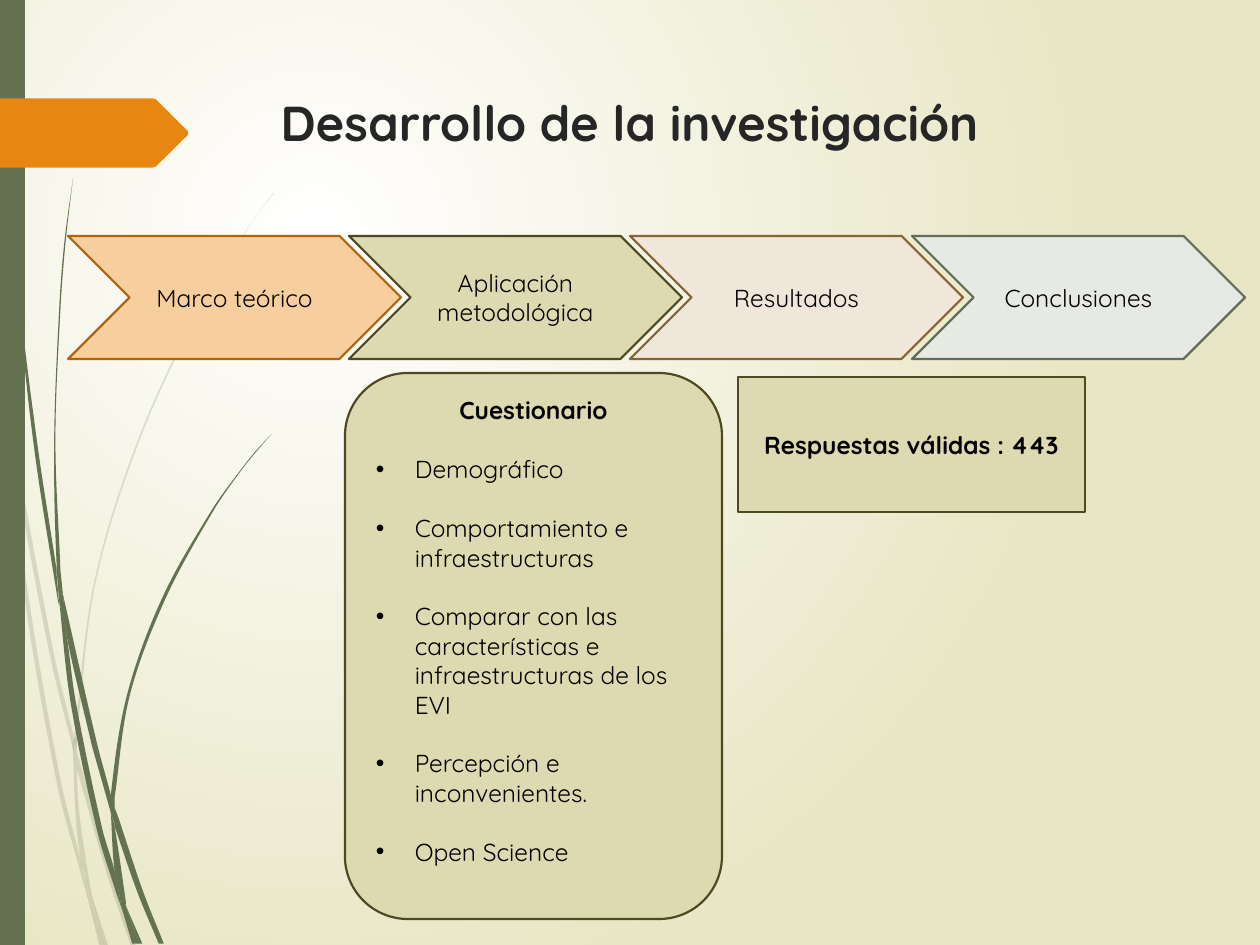
from math import hypot

from lxml.etree import SubElement
from pptx import Presentation
from pptx.dml.color import RGBColor
from pptx.enum.shapes import MSO_SHAPE
from pptx.enum.text import MSO_ANCHOR, PP_ALIGN
from pptx.oxml.ns import qn
from pptx.util import Pt

PX = 914400 / 126
FINE = 9144  # hundredths of an inch, for the thin outlines
WIDTH, HEIGHT = 1260, 945

GREEN, ORANGE, INK, BLACK = "647252", "E78712", "262626", "000000"
OLIVE, OLIVE_LINE = "DDD9B0", "4D4A22"
BACKGROUND = ["FFFFFF", "E8E6C4"]

TITLE = "Desarrollo de la investigación"
STAGES = [
    ("Marco teórico", "F7CF9E", "AD650E"),
    ("Aplicación metodológica", OLIVE, OLIVE_LINE),
    ("Resultados", "F0E7DA", "866436"),
    ("Conclusiones", "E6E9E4", "636E58"),
]
SURVEY_TITLE = "Cuestionario"
SURVEY_TOPICS = [
    "Demográfico",
    "Comportamiento e infraestructuras",
    "Comparar con las características e infraestructuras de los EVI",
    "Percepción e inconvenientes.",
    "Open Science",
]
ANSWERS = "Respuestas válidas : 443"

# Grass: each leaf has an edge running down and an edge running back up
PALE_GRASS = [
    ([(0, 282), (6, 322), (8, 350)], [(7, 344), (0, 299)]),
    ([(10, 345), (43, 520), (59, 586)], [(59, 599), (40, 522), (12, 376)]),
    ([(61, 596), (64, 607), (88, 692), (108, 751)],
     [(104, 751), (85, 694), (61, 610)]),
    ([(73, 711), (86, 751)], [(83, 751), (73, 711)]),
    ([(8, 350), (12, 376), (22, 469), (48, 619), (64, 683), (69, 707), (70, 714)],
     [(64, 693), (45, 621), (19, 470), (8, 350)]),
    ([(58, 599), (61, 608), (61, 610), (63, 646), (72, 706), (73, 711)],
     [(67, 692), (64, 683), (60, 646), (58, 599)]),
    ([(217, 153), (201, 175), (186, 197), (158, 244), (110, 348), (75, 461),
      (59, 584), (59, 586), (61, 596)],
     [(61, 584), (76, 462), (111, 349), (159, 245), (187, 198), (201, 175),
      (217, 154)]),
    ([(70, 714), (82, 751)], [(79, 751), (70, 714)]),
    ([(58, 599), (59, 586), (61, 596)], [(61, 610), (61, 608)]),
    ([(65, 683), (67, 692), (73, 711), (83, 751)],
     [(82, 751), (70, 714), (69, 707)]),
]
DARK_GRASS = [
    ([(2, 0), (3, 48), (5, 110), (14, 233), (27, 355), (46, 477), (47, 481)],
     [(45, 457), (45, 453), (30, 355), (15, 232), (6, 109), (4, 48), (3, 0)]),
    ([(50, 472), (77, 590), (88, 631), (88, 633), (88, 645)],
     [(73, 592), (53, 505), (50, 472)]),
    ([(91, 641), (94, 649), (113, 706), (130, 749)],
     [(126, 749), (109, 708), (91, 656)]),
    ([(47, 477), (53, 505), (60, 556), (81, 657), (91, 691), (96, 717), (97, 722)],
     [(92, 708), (77, 659), (56, 557), (47, 477)]),
    ([(58, 141), (51, 193), (47, 245), (43, 349), (45, 449), (49, 472), (50, 472)],
     [(48, 453), (44, 349), (48, 245), (52, 193), (58, 141)]),
    ([(100, 719), (113, 749)], [(110, 749), (100, 719)]),
    ([(45, 449), (49, 472), (50, 472), (53, 505)], [(47, 477), (45, 453)]),
    ([(216, 344), (203, 358), (191, 373), (168, 405), (129, 474), (101, 551),
      (88, 631), (91, 641)],
     [(91, 633), (103, 552), (131, 476), (169, 406), (191, 374), (203, 359),
      (216, 344)]),
    ([(97, 722), (108, 749)], [(105, 749), (97, 722)]),
    ([(88, 645), (91, 656), (100, 716), (100, 719)],
     [(96, 706), (91, 691), (88, 645)]),
    ([(88, 631), (91, 641), (91, 656)], [(90, 651), (88, 645), (88, 633)]),
    ([(91, 691), (96, 706), (100, 719), (110, 749)],
     [(108, 749), (97, 722), (96, 717)]),
]
TAB = [(149, 107), (124, 132), (121, 133), (0, 133),
       (0, 78), (121, 78), (124, 79), (149, 104)]

STAGE_BOX, STAGE_SPAN = (68, 236, 333, 123), 844
BODY = {"name": "Quicksand", "size": Pt(14), "bold": False}
STRONG = {**BODY, "bold": True}
HEADING = {**STRONG, "size": Pt(28)}


def emu(px):
    return round(px * PX)


def rgb(color):
    return RGBColor.from_string(color)


def paint(shape, fill, line=None):
    shape.shadow.inherit = False
    shape.fill.solid()
    shape.fill.fore_color.rgb = rgb(fill)
    if line:
        shape.line.color.rgb = rgb(line)
        shape.line.width = Pt(1.25)
    else:
        shape.line.fill.background()


def add_box(slide, kind, box, fill, line=None):
    shape = slide.shapes.add_shape(kind, *map(emu, box))
    paint(shape, fill, line)
    return shape


def add_outline(slide, points, fill):
    start, *others = [(round(x * FINE), round(y * FINE)) for x, y in points]
    builder = slide.shapes.build_freeform(*start)
    builder.add_line_segments(others, close=True)
    outline = builder.convert_to_shape()
    paint(outline, fill)
    return outline


def write(paragraph, text, style, align=PP_ALIGN.CENTER, color=BLACK):
    paragraph.text = text
    paragraph.alignment = align
    for key, value in style.items():
        setattr(paragraph.font, key, value)
    paragraph.font.color.rgb = rgb(color)


def add_bullet(paragraph, indent):
    properties = paragraph._p.get_or_add_pPr()
    properties.set("marL", str(emu(indent)))
    properties.set("indent", str(-emu(indent)))
    SubElement(properties, qn("a:buFont"), typeface="Arial")
    SubElement(properties, qn("a:buChar"), char="•")


def bezier(edge):
    """Two handles and an end point for each stretch of a smooth edge."""
    padded = [edge[0], *edge, edge[-1]]
    points = []
    for a, b, c, d in zip(padded, padded[1:], padded[2:], padded[3:]):
        reach = hypot(c[0] - b[0], c[1] - b[1]) / 3
        start, end = (reach / hypot(q[0] - p[0], q[1] - p[1])
                      for p, q in ((a, c), (b, d)))
        points += [(b[0] + (c[0] - a[0]) * start, b[1] + (c[1] - a[1]) * start),
                   (c[0] - (d[0] - b[0]) * end, c[1] - (d[1] - b[1]) * end), c]
    return points


def add_leaf(slide, down, up, opacity):
    points = [down[0], *bezier(down), *[up[0]] * 3, *bezier(up)]
    leaf = add_outline(slide, points, GREEN)
    lines = list(leaf._element.iter(qn("a:lnTo")))
    for stretch in zip(lines[::3], lines[1::3], lines[2::3]):
        curve = stretch[0].makeelement(qn("a:cubicBezTo"))
        stretch[0].addprevious(curve)
        for line in stretch:
            curve.append(line[0])
            line.getparent().remove(line)
    if opacity < 100:
        color = leaf._element.spPr.find(qn("a:solidFill"))[0]
        SubElement(color, qn("a:alpha"), val=str(opacity * 1000))


def set_background(slide):
    fill = slide.background.fill
    fill.gradient()
    for stop, position, color in zip(fill.gradient_stops, (0, 1), BACKGROUND):
        stop.position = position
        stop.color.rgb = rgb(color)
    gradient = next(slide._element.iter(qn("a:gradFill")))
    gradient.remove(gradient.find(qn("a:lin")))
    circle = SubElement(gradient, qn("a:path"), path="circle")
    SubElement(circle, qn("a:fillToRect"),
               l="50000", t="50000", r="100000", b="100000")


def set_title(slide):
    title = slide.shapes.title
    title.left, title.top, title.width, title.height = map(emu, (268, 86, 908, 176))
    title.text_frame.vertical_anchor = MSO_ANCHOR.TOP
    write(title.text_frame.paragraphs[0], TITLE, HEADING, PP_ALIGN.LEFT, INK)


def add_survey(slide):
    survey = add_box(slide, MSO_SHAPE.ROUNDED_RECTANGLE, (345, 373, 377, 546),
                     OLIVE, OLIVE_LINE)
    frame = survey.text_frame
    frame.vertical_anchor, frame.margin_top = MSO_ANCHOR.TOP, emu(4)
    write(frame.paragraphs[0], SURVEY_TITLE, STRONG)
    for topic in SURVEY_TOPICS:
        paragraph = frame.add_paragraph()
        write(paragraph, topic, BODY, PP_ALIGN.LEFT)
        paragraph.space_before = Pt(16.8)
        add_bullet(paragraph, 39)


def main():
    deck = Presentation()
    deck.slide_width, deck.slide_height = emu(WIDTH), emu(HEIGHT)
    slide = deck.slides.add_slide(deck.slide_layouts[5])
    set_background(slide)
    for grass, opacity in ((PALE_GRASS, 20), (DARK_GRASS, 100)):
        for down, up in grass:
            add_leaf(slide, down, up, opacity)
    add_box(slide, MSO_SHAPE.RECTANGLE, (0, 0, 25, HEIGHT), GREEN)
    add_outline(slide, TAB, ORANGE)
    set_title(slide)
    left, *rest = STAGE_BOX
    for i, (label, fill, line) in enumerate(STAGES):
        place = (left + i * STAGE_SPAN // (len(STAGES) - 1), *rest)
        stage = add_box(slide, MSO_SHAPE.CHEVRON, place, fill, line)
        write(stage.text_frame.paragraphs[0], label, BODY)
    add_survey(slide)
    answers = add_box(slide, MSO_SHAPE.RECTANGLE, (738, 377, 347, 135),
                      OLIVE, OLIVE_LINE)
    write(answers.text_frame.paragraphs[0], ANSWERS, STRONG)
    deck.save("out.pptx")


if __name__ == "__main__":
    main()
